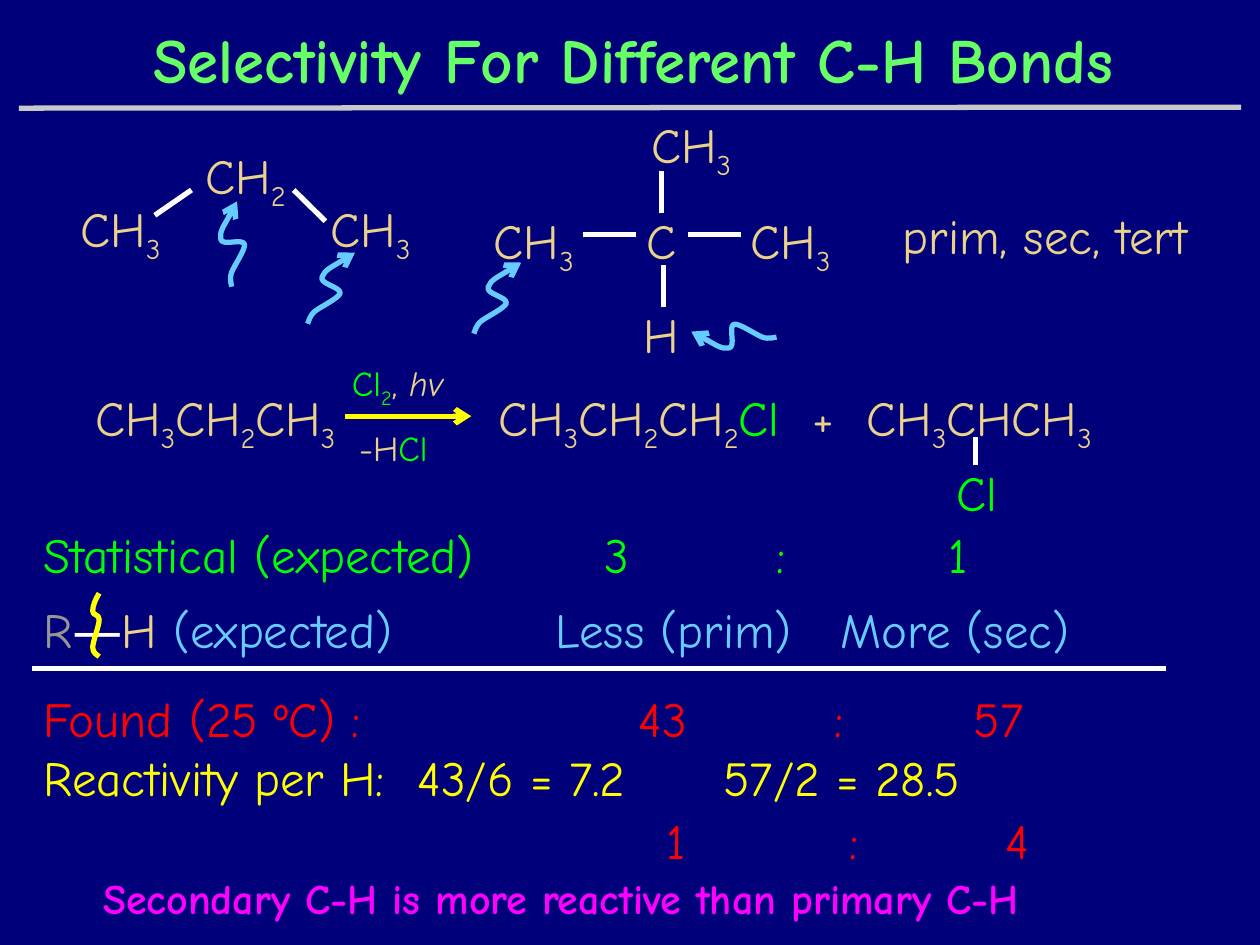
"""Build a slide on the selectivity of radical chlorination for different C-H bonds."""
from dataclasses import dataclass
from itertools import groupby
from lxml.etree import SubElement
from pptx import Presentation
from pptx.dml.color import RGBColor
from pptx.enum.shapes import MSO_CONNECTOR as Connector
from pptx.enum.text import MSO_ANCHOR as Anchor, PP_ALIGN as Align
from pptx.oxml.ns import qn
from pptx.util import Cm, Pt

FONT = "Comic Neue"
COLORS = {
    "navy": "00007A", "mint": "66FF66", "sand": "EBD189", "green": "00FF00",
    "gray": "969696", "white": "FFFFFF", "sky": "66CCFF", "red": "FF0000",
    "yellow": "FFFF00", "silver": "C9C9C9", "magenta": "FF00FF",
}


@dataclass(frozen=True)
class Span:
    text: str
    color: str = "sand"
    subscript: bool = False
    italic: bool = False


@dataclass(frozen=True)
class Label:
    left: float
    top: float
    width: float
    spans: list[Span]
    height: float = 1.45
    size: int = 28
    bold: bool = False
    align: Align = Align.CENTER
    tabs: tuple[float, ...] = ()
    wrap: bool = True


@dataclass(frozen=True)
class Line:
    x1: float
    y1: float
    x2: float
    y2: float
    color: str = "white"
    arrow: bool = False


@dataclass(frozen=True)
class Squiggle:
    left: float
    top: float
    points: list[tuple[float, float]]
    rotation: int = 0
    color: str = "sky"
    arrow: bool = True


def rgb(name: str) -> RGBColor:
    """Return the named colour."""
    return RGBColor.from_string(COLORS[name])


def formula(text: str, color: str = "sand") -> list[Span]:
    """Split a chemical formula into spans with its digits as subscripts."""
    return [Span("".join(part), color, digits) for digits, part in groupby(text, str.isdigit)]


def group(text: str, left: float, top: float, width: float = 3.18, color: str = "sand") -> Label:
    """Describe an atom or group in a structure."""
    return Label(left, top, width, formula(text, color))


def row(top: float, spans: list[Span], tabs: tuple[float, ...], left: float = 0.63,
        width: float = 23.7) -> Label:
    """Describe a row of values centred on tab stops."""
    return Label(left, top, width, spans, align=Align.LEFT, tabs=tabs)


def draw_label(page, label: Label) -> None:
    """Draw a text box run by run."""
    box = page.shapes.add_textbox(Cm(label.left), Cm(label.top), Cm(label.width), Cm(label.height))
    frame = box.text_frame
    frame.word_wrap = label.wrap
    frame.vertical_anchor = Anchor.MIDDLE if label.bold and label.wrap else Anchor.TOP
    para = frame.paragraphs[0]
    para.alignment = label.align
    if label.tabs:
        stops = SubElement(para._p.get_or_add_pPr(), qn("a:tabLst"))
        for position in label.tabs:
            SubElement(stops, qn("a:tab"), pos=str(Cm(position)), algn="ctr")
    for span in label.spans:
        run = para.add_run()
        run.text = span.text
        font = run.font
        font.name, font.size, font.bold = FONT, Pt(label.size), label.bold
        font.italic = span.italic
        font.color.rgb = rgb(span.color)
        if span.subscript:
            run._r.get_or_add_rPr().set("baseline", "-25000")


def style_line(shape, color: str, arrow: bool) -> None:
    """Give a line its colour, weight and arrowhead."""
    shape.line.color.rgb = rgb(color)
    shape.line.width = Pt(3)
    if arrow:
        SubElement(shape.line._get_or_add_ln(), qn("a:tailEnd"), type="arrow")


def draw_line(page, line: Line) -> None:
    """Draw a straight line."""
    ends = (Cm(value) for value in (line.x1, line.y1, line.x2, line.y2))
    connector = page.shapes.add_connector(Connector.STRAIGHT, *ends)
    style_line(connector, line.color, line.arrow)
    SubElement(connector._element.spPr, qn("a:effectLst"))


def bend(shape) -> None:
    """Turn every three straight segments of a freeform into one cubic curve."""
    outline = next(shape._element.iter(qn("a:path")))
    segments = outline.findall(qn("a:lnTo"))
    for first in range(0, len(segments), 3):
        curve = SubElement(outline, qn("a:cubicBezTo"))
        for segment in segments[first:first + 3]:
            curve.append(segment[0])
            outline.remove(segment)


def draw_squiggle(page, squiggle: Squiggle) -> None:
    """Draw a wavy line, turned about its centre."""
    spots = [(Cm(squiggle.left + x), Cm(squiggle.top + y)) for x, y in squiggle.points]
    builder = page.shapes.build_freeform(*spots[0])
    builder.add_line_segments(spots[1:], close=False)
    shape = builder.convert_to_shape()
    bend(shape)
    shape.shadow.inherit = False
    shape.fill.background()
    shape.rotation = squiggle.rotation
    style_line(shape, squiggle.color, squiggle.arrow)


POINTER = [(0.25, 1.72), (0.25, 1.69), (0.2, 1.57), (0.25, 1.43), (0.3, 1.3), (0.53, 0.97),
           (0.51, 0.86), (0.46, 0.74), (0.05, 0.91), (0.03, 0.76), (0, 0.61), (0.3, 0.13), (0.36, 0)]
BREAK = [(0.13, 0), (0.05, 0.13), (0, 0.25), (0, 0.36), (0, 0.46), (0.13, 0.41), (0.13, 0.53),
         (0.13, 0.66), (0, 0.97), (0, 1.09), (0, 1.22), (0.1, 1.24), (0.13, 1.28)]

LABELS = [
    Label(0.02, -0.2, 25.5, [Span("Selectivity For Different C-H Bonds", "mint")], 2.77, 36, True),
    row(7.68, formula("\tCH3CH2CH3\tCH3CH2CH2") + [Span("Cl", "green")]
        + formula("\t+\tCH3CHCH3"), (3.25, 11.79, 15.5, 18.65), 0.84, 22.23),
    row(10.45, [Span("Statistical (expected)\t3\t:\t1", "green")], (11.56, 14.86, 18.44), width=22.66),
    row(11.96, [Span("R", "gray"), Span("―", "white"), Span("H "),
                Span("(expected)\tLess (prim)\tMore (sec)", "sky")], (12.7, 18.37), width=23.93),
    row(13.75, [Span("Found (25 ºC) :\t43\t:\t57", "red")], (12.48, 16.03, 19.25)),
    row(14.95, [Span("Reactivity per H:\t43/6 = 7.2\t57/2 = 28.5", "yellow")], (9.63, 16.09)),
    row(16.21, [Span("\t1\t:\t4", "red")], (1.19, 4.78, 8.07), 12.19, 9.78),
    group("CH3", 0.84, 3.87),
    group("CH2", 3.36, 2.8),
    group("CH3", 5.88, 3.87),
    group("CH3", 9.17, 4.11),
    group("CH3", 12.34, 2.18),
    group("CH3", 14.35, 4.11),
    group("C", 12.38, 4.11, 1.9),
    group("H", 12.06, 6.02, 2.54),
    group("prim, sec, tert", 17.13, 4.01, 7.87),
    group("Cl", 18.75, 9.19, 1.9, "green"),
    Label(6.56, 8.47, 2.74, [Span("-H"), Span("Cl", "green")], 1.09, 20),
    Label(5.89, 7.16, 4.24, formula("Cl2", "green") + [Span(", "), Span("hv", italic=True)], 1.09, 20),
    Label(1.83, 17.46, 21.72, [Span("Secondary C-H is more reactive than primary C-H", "magenta")],
          1.27, 24, True, Align.LEFT, wrap=False),
]
LINES = [
    Line(3.86, 3.83, 3.12, 4.34), Line(6.56, 4.46, 5.92, 3.83),
    Line(11.75, 4.72, 12.82, 4.72), Line(13.87, 4.72, 14.93, 4.72),
    Line(13.34, 3.45, 13.34, 4.29), Line(13.37, 5.34, 13.37, 6.18),
    Line(19.66, 8.81, 19.66, 9.37), Line(0.64, 13.48, 23.5, 13.48),
    Line(6.96, 8.39, 9.5, 8.39, "yellow", True), Line(0.38, 2.18, 25.02, 2.16, "silver"),
]
SQUIGGLES = [
    Squiggle(4.42, 4.06, POINTER), Squiggle(6.38, 4.93, POINTER, 30),
    Squiggle(9.73, 5.13, POINTER, 30), Squiggle(14.53, 5.92, POINTER, 270),
    Squiggle(1.87, 11.96, BREAK, color="yellow", arrow=False),
]


def main() -> None:
    """Build and save the deck."""
    deck = Presentation()
    deck.slide_width, deck.slide_height = Cm(25.4), Cm(19.05)
    page = deck.slides.add_slide(deck.slide_layouts[6])
    page.background.fill.solid()
    page.background.fill.fore_color.rgb = rgb("navy")
    for draw, items in ((draw_label, LABELS), (draw_line, LINES), (draw_squiggle, SQUIGGLES)):
        for item in items:
            draw(page, item)
    deck.save("out.pptx")


if __name__ == "__main__":
    main()
